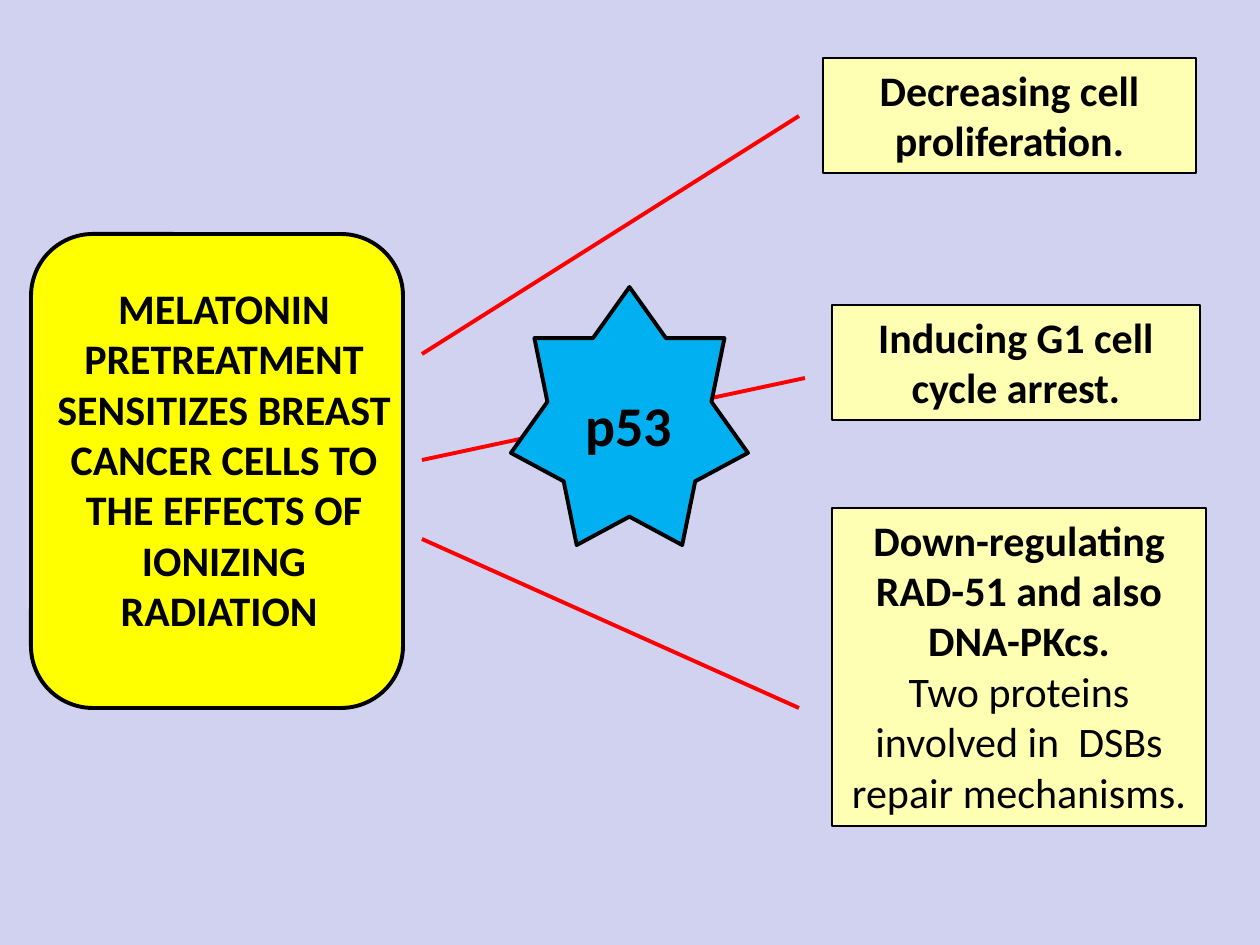
from lxml.etree import SubElement
from pptx import Presentation
from pptx.dml.color import RGBColor
from pptx.enum.shapes import MSO_CONNECTOR as CONN, MSO_SHAPE as SHAPE
from pptx.enum.text import MSO_ANCHOR as ANCHOR, MSO_AUTO_SIZE as FIT, PP_ALIGN as ALIGN
from pptx.oxml.ns import qn
from pptx.util import Pt

EMU_PER_PX = 914400 / 126
FONT = "Calibri"
COLORS = {
    "background": "D1D1F0",
    "effect": "FFFFB3",
    "cause": "FFFF00",
    "protein": "00B0F0",
    "link": "FF0000",
    "ink": "000000",
}
EFFECTS = [
    ((823, 58, 373, 115), [("Decreasing cell proliferation.", True)]),
    ((832, 305, 368, 115), [("Inducing G1 cell cycle arrest.", True)]),
    ((832, 508, 374, 318), [
        ("Down-regulating RAD-51 and also DNA-PKcs.", True),
        ("Two proteins involved in  DSBs repair mechanisms.", False),
    ]),
]
LINKS = [(422, 539, 799, 708), (422, 354, 799, 116), (422, 460, 805, 378)]
CAUSE = ("MELATONIN PRETREATMENT SENSITIZES BREAST CANCER CELLS "
         "TO THE EFFECTS OF IONIZING RADIATION ")


def px(n):
    """Turn pixels into EMU."""
    return round(n * EMU_PER_PX)


def color(name):
    """Look up a named colour."""
    return RGBColor.from_string(COLORS[name])


def add_box(shapes, kind, box, fill, width=None):
    """Add a filled preset shape, outlined when a line width is given."""
    sp = shapes.add_shape(kind, *map(px, box))
    sp.shadow.inherit = False
    sp.fill.solid()
    sp.fill.fore_color.rgb = color(fill)
    if width is None:
        sp.line.fill.background()
    else:
        sp.line.color.rgb = color("ink")
        sp.line.width = Pt(width)
    return sp


def write(sp, paragraphs, size=24):
    """Write centred (text, bold) paragraphs and return the text frame."""
    tf = sp.text_frame
    tf.word_wrap = True
    tf.auto_size = FIT.SHAPE_TO_FIT_TEXT
    tf.vertical_anchor = ANCHOR.TOP
    for i, (text, bold) in enumerate(paragraphs):
        p = tf.add_paragraph() if i else tf.paragraphs[0]
        p.alignment = ALIGN.CENTER
        r = p.add_run()
        r.text = text
        r.font.name = FONT
        r.font.size = Pt(size)
        r.font.bold = bold
        r.font.color.rgb = color("ink")
    return tf


def add_link(s, ends):
    """Add a straight red line without shadow."""
    line = s.shapes.add_connector(CONN.STRAIGHT, *map(px, ends))
    line.line.color.rgb = color("link")
    line.line.width = Pt(2.25)
    SubElement(line._element.spPr, qn("a:effectLst"))


def add_cause(s):
    """Add the rounded panel and its statement."""
    add_box(s.shapes, SHAPE.ROUNDED_RECTANGLE, (31, 234, 372, 474), "cause", 2.25)
    sp = s.shapes.add_textbox(*map(px, (38, 276, 372, 369)))
    p = write(sp, [(CAUSE, True)]).paragraphs[0]
    p.space_before = Pt(24)
    p.space_after = Pt(6)


def add_protein(s):
    """Add the grouped star and its label."""
    group = s.shapes.add_group_shape()
    add_box(group.shapes, SHAPE.STAR_7_POINT, (511, 287, 237, 258), "protein", 2.25)
    label = add_box(group.shapes, SHAPE.RECTANGLE, (565, 384, 128, 81), "protein")
    write(label, [("p53", True)], 32)


def main():
    """Build and save the slide."""
    prs = Presentation()
    prs.slide_width, prs.slide_height = px(1260), px(945)
    s = prs.slides.add_slide(prs.slide_layouts[6])
    s.background.fill.solid()
    s.background.fill.fore_color.rgb = color("background")
    for box, paragraphs in EFFECTS:
        write(add_box(s.shapes, SHAPE.RECTANGLE, box, "effect", 0.75), paragraphs)
    add_cause(s)
    for ends in LINKS:
        add_link(s, ends)
    add_protein(s)
    prs.save("out.pptx")


if __name__ == "__main__":
    main()
